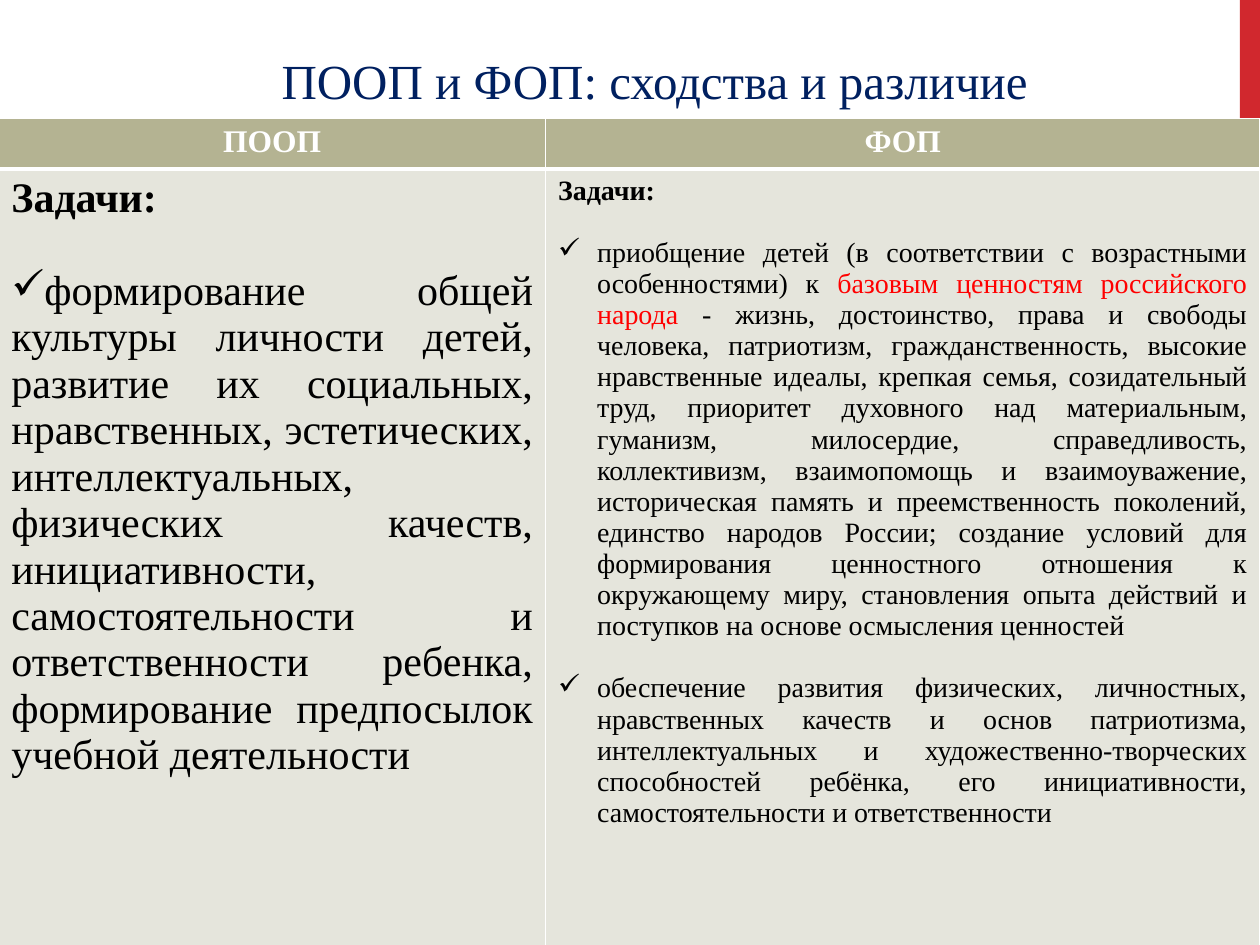
"""Build a slide that compares the tasks of two education programmes in a table."""
from lxml import etree
from pptx import Presentation
from pptx import util as u
from pptx.dml import color
from pptx.enum import shapes, text
from pptx.oxml import ns

FONT = "Times New Roman"
COLORS = {
    "title": "002060",
    "accent": "D1282E",
    "header": "B4B392",
    "body": "E5E5DC",
    "white": "FFFFFF",
    "black": "000000",
    "highlight": "FF0000",
}
HEADERS = ["ПООП", "ФОП"]
HEADING = "Задачи:"
COLUMN_WIDTHS = [4.34, 5.67]
ROW_HEIGHTS = [0.4, 6.17]
GENERAL_TASKS = [
    [("формирование общей культуры личности детей, развитие их социальных, "
      "нравственных, эстетических, интеллектуальных, физических качеств, "
      "инициативности, самостоятельности и ответственности ребенка, "
      "формирование предпосылок учебной деятельности", "black")],
]
FEDERAL_TASKS = [
    [("приобщение детей (в соответствии с возрастными особенностями) к ", "black"),
     ("базовым ценностям российского народа ", "highlight"),
     ("- жизнь, достоинство, права и свободы человека, патриотизм, "
      "гражданственность, высокие нравственные идеалы, крепкая семья, "
      "созидательный труд, приоритет духовного над материальным, гуманизм, "
      "милосердие, справедливость, коллективизм, взаимопомощь и взаимоуважение, "
      "историческая память и преемственность поколений, единство народов России; "
      "создание условий для формирования ценностного отношения к окружающему миру, "
      "становления опыта действий и поступков на основе осмысления ценностей", "black")],
    [("обеспечение развития физических, личностных, нравственных качеств и основ "
      "патриотизма, интеллектуальных и художественно-творческих способностей ребёнка, "
      "его инициативности, самостоятельности и ответственности", "black")],
]


def rgb(name):
    return color.RGBColor.from_string(COLORS[name])


def set_font(font, size, color_name, bold=False):
    font.name = FONT
    font.size = u.Pt(size)
    font.bold = bold
    font.color.rgb = rgb(color_name)


def add_title(slide, wording):
    title = slide.shapes.title
    title.left, title.top = u.Inches(0.51), u.Inches(0.35)
    title.width, title.height = u.Inches(9.37), u.Inches(0.57)
    title.text_frame.text = wording
    paragraph = title.text_frame.paragraphs[0]
    paragraph.alignment = text.PP_ALIGN.CENTER
    set_font(paragraph.font, 28, "title")


def add_accent_bar(slide):
    bar = slide.shapes.add_shape(shapes.MSO_SHAPE.RECTANGLE, u.Inches(9.84), 0,
                                 u.Inches(0.16), u.Inches(1.5))
    bar.shadow.inherit = False
    bar.fill.solid()
    bar.fill.fore_color.rgb = rgb("accent")
    bar.line.fill.background()


def style_cell(cell, fill_name, top, bottom):
    cell.fill.solid()
    cell.fill.fore_color.rgb = rgb(fill_name)
    properties = cell._tc.get_or_add_tcPr()
    widths = {"lnL": 1, "lnR": 1, "lnT": top, "lnB": bottom}
    for index, (tag, width) in enumerate(widths.items()):
        line = etree.Element(ns.qn(f"a:{tag}"), w=str(u.Pt(width)))
        fill = etree.SubElement(line, ns.qn("a:solidFill"))
        etree.SubElement(fill, ns.qn("a:srgbClr"), val=COLORS["white"])
        properties.insert(index, line)


def add_check_bullet(paragraph, margin):
    properties = paragraph._p.get_or_add_pPr()
    properties.set("marL", str(u.Inches(margin)))
    properties.set("indent", str(u.Inches(-0.31)))
    etree.SubElement(properties, ns.qn("a:buChar"), char="✓")


def fill_header(cell, wording):
    style_cell(cell, "header", 1, 3)
    cell.text = wording
    paragraph = cell.text_frame.paragraphs[0]
    paragraph.alignment = text.PP_ALIGN.CENTER
    set_font(paragraph.font, 18, "white", bold=True)


def fill_tasks(cell, tasks, size, margin):
    style_cell(cell, "body", 3, 1)
    frame = cell.text_frame
    heading = frame.paragraphs[0]
    heading.text = HEADING
    heading.alignment = text.PP_ALIGN.JUSTIFY
    set_font(heading.font, size, "black", bold=True)
    for task in tasks:
        paragraph = frame.add_paragraph()
        paragraph.alignment = text.PP_ALIGN.JUSTIFY
        paragraph.space_before = u.Pt(round(size * 1.11, 1))
        add_check_bullet(paragraph, margin)
        set_font(paragraph.font, size, "black")
        for wording, color_name in task:
            run = paragraph.add_run()
            run.text = wording
            run.font.color.rgb = rgb(color_name)


def add_comparison(slide):
    table = slide.shapes.add_table(
        len(ROW_HEIGHTS), len(COLUMN_WIDTHS), u.Inches(-0.01), u.Inches(0.94),
        u.Inches(sum(COLUMN_WIDTHS)), u.Inches(sum(ROW_HEIGHTS))).table
    for column, width in zip(table.columns, COLUMN_WIDTHS):
        column.width = u.Inches(width)
    for row, height in zip(table.rows, ROW_HEIGHTS):
        row.height = u.Inches(height)
    for index, wording in enumerate(HEADERS):
        fill_header(table.cell(0, index), wording)
    fill_tasks(table.cell(1, 0), GENERAL_TASKS, size=24, margin=0)
    fill_tasks(table.cell(1, 1), FEDERAL_TASKS, size=16, margin=0.31)


def main():
    presentation = Presentation()
    presentation.slide_width = u.Inches(10)
    presentation.slide_height = u.Inches(7.5)
    slide = presentation.slides.add_slide(presentation.slide_layouts[5])
    add_title(slide, "ПООП и ФОП: сходства и различие")
    add_accent_bar(slide)
    add_comparison(slide)
    presentation.save("out.pptx")


if __name__ == "__main__":
    main()
